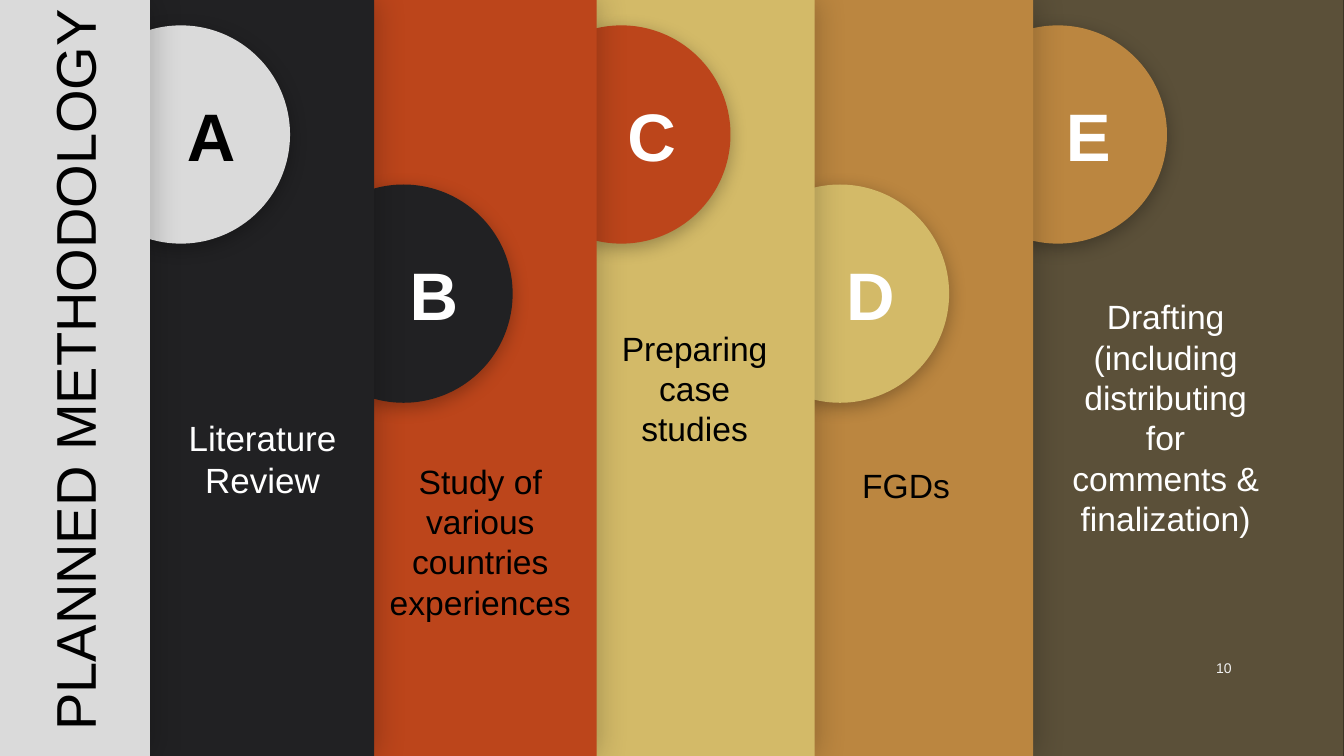
import pptx
import pptx.util
import pptx.dml.color
import pptx.enum.shapes
import pptx.enum.text
import pptx.oxml
import pptx.oxml.ns

Cm = pptx.util.Cm
RGBColor = pptx.dml.color.RGBColor
MSO_SHAPE = pptx.enum.shapes.MSO_SHAPE
PP_ALIGN = pptx.enum.text.PP_ALIGN
MSO_ANCHOR = pptx.enum.text.MSO_ANCHOR

BLACK = RGBColor(0x00, 0x00, 0x00)
WHITE = RGBColor(0xFF, 0xFF, 0xFF)
OFF_WHITE = RGBColor(0xF2, 0xF2, 0xF2)
SILVER = RGBColor(0xDA, 0xDA, 0xDA)
CHARCOAL = RGBColor(0x21, 0x21, 0x23)
RUST = RGBColor(0xBC, 0x45, 0x1B)
SAND = RGBColor(0xD3, 0xBA, 0x68)
OCHRE = RGBColor(0xBB, 0x86, 0x40)
OLIVE = RGBColor(0x5B, 0x50, 0x39)

SLIDE_W, SLIDE_H = 33.87, 19.05
PANEL_W = 5.72
CIRCLE = 5.5
CIRCLE_SHIFT = 1.9
HIGH, LOW = 0.64, 4.65

prs = pptx.Presentation()
prs.slide_width, prs.slide_height = Cm(SLIDE_W), Cm(SLIDE_H)
s = prs.slides.add_slide(prs.slide_layouts[6])
s.background.fill.solid()
s.background.fill.fore_color.rgb = BLACK


def add_block(kind, left, top, width, height, color, shadow=None):
    """Add a borderless shape; shadow is (opacity %, blur pt, angle in degrees)."""
    sp = s.shapes.add_shape(kind, Cm(left), Cm(top), Cm(width), Cm(height))
    sp.fill.solid()
    sp.fill.fore_color.rgb = color
    sp.line.fill.background()
    sp.shadow.inherit = False
    if shadow:
        opacity, blur, angle = shadow
        effects = sp._element.spPr.find(pptx.oxml.ns.qn("a:effectLst"))
        effects.append(pptx.oxml.parse_xml(
            f'<a:outerShdw {pptx.oxml.ns.nsdecls("a")} blurRad="{pptx.util.Pt(blur)}" '
            f'dist="{pptx.util.Pt(3)}" dir="{angle * 60000}" algn="ctr" rotWithShape="0">'
            f'<a:srgbClr val="{BLACK}"><a:alpha val="{opacity * 1000}"/></a:srgbClr>'
            '</a:outerShdw>'))
    return sp


def write(sp, text, size, color, align=PP_ALIGN.CENTER, anchor=MSO_ANCHOR.MIDDLE,
          bold=False, wrap=True):
    tf = sp.text_frame
    tf.word_wrap = wrap
    tf.vertical_anchor = anchor
    p = tf.paragraphs[0]
    p.alignment = align
    r = p.add_run()
    r.text = text
    r.font.name = "Arial"
    r.font.size = pptx.util.Pt(size)
    r.font.bold = bold
    r.font.color.rgb = color


PANEL_SHADOW = (18, 20, 0)
CIRCLE_SHADOW = (28, 13, 90)

# Each panel lies over the circle of the step to its right
steps = [
    ("E", 25.81, HIGH, OLIVE, OCHRE, WHITE),
    ("D", 20.32, LOW, OCHRE, SAND, WHITE),
    ("C", 14.81, HIGH, SAND, RUST, WHITE),
    ("B", 9.32, LOW, RUST, CHARCOAL, WHITE),
    ("A", 3.71, HIGH, CHARCOAL, SILVER, BLACK),
]
for letter, left, top, panel_color, circle_color, letter_color in steps:
    add_block(MSO_SHAPE.RECTANGLE, left, 0, PANEL_W, SLIDE_H, panel_color, PANEL_SHADOW)
    sp = add_block(MSO_SHAPE.OVAL, left - CIRCLE_SHIFT, top, CIRCLE, CIRCLE,
                   circle_color, CIRCLE_SHADOW)
    sp.text_frame.margin_left = Cm(1.78)
    write(sp, letter, 48, letter_color, bold=True)

add_block(MSO_SHAPE.RECTANGLE, 30.89, 0, 2.97, SLIDE_H, OLIVE)
add_block(MSO_SHAPE.RECTANGLE, -0.05, 0, 3.83, SLIDE_H, SILVER, PANEL_SHADOW)

captions = [
    ("Literature Review", 3.81, 10.36, 5.61, 2.39, 25, WHITE),
    ("Study of various countries experiences", 9.3, 11.48, 5.61, 4.37, 24, BLACK),
    ("Preparing case studies", 15.09, 8.13, 4.83, 3.33, 24, BLACK),
    ("FGDs", 20.42, 11.58, 4.83, 1.27, 24, BLACK),
    ("Drafting (including distributing for comments & finalization)",
     26.62, 7.34, 5.51, 6.4, 24, WHITE),
]
for text, left, top, width, height, size, color in captions:
    sp = s.shapes.add_textbox(Cm(left), Cm(top), Cm(width), Cm(height))
    write(sp, text, size, color, anchor=MSO_ANCHOR.TOP)

title = s.shapes.add_textbox(Cm(-7.67), Cm(7.47), Cm(SLIDE_H), Cm(3.71))
title.rotation = 270
write(title, "PLANNED METHODOLOGY", 40, BLACK, wrap=False)

number = s.shapes.add_textbox(Cm(29.21), Cm(16.33), Cm(2.08), Cm(1.02))
write(number, "10", 10, OFF_WHITE, align=PP_ALIGN.RIGHT)

prs.save("out.pptx")
